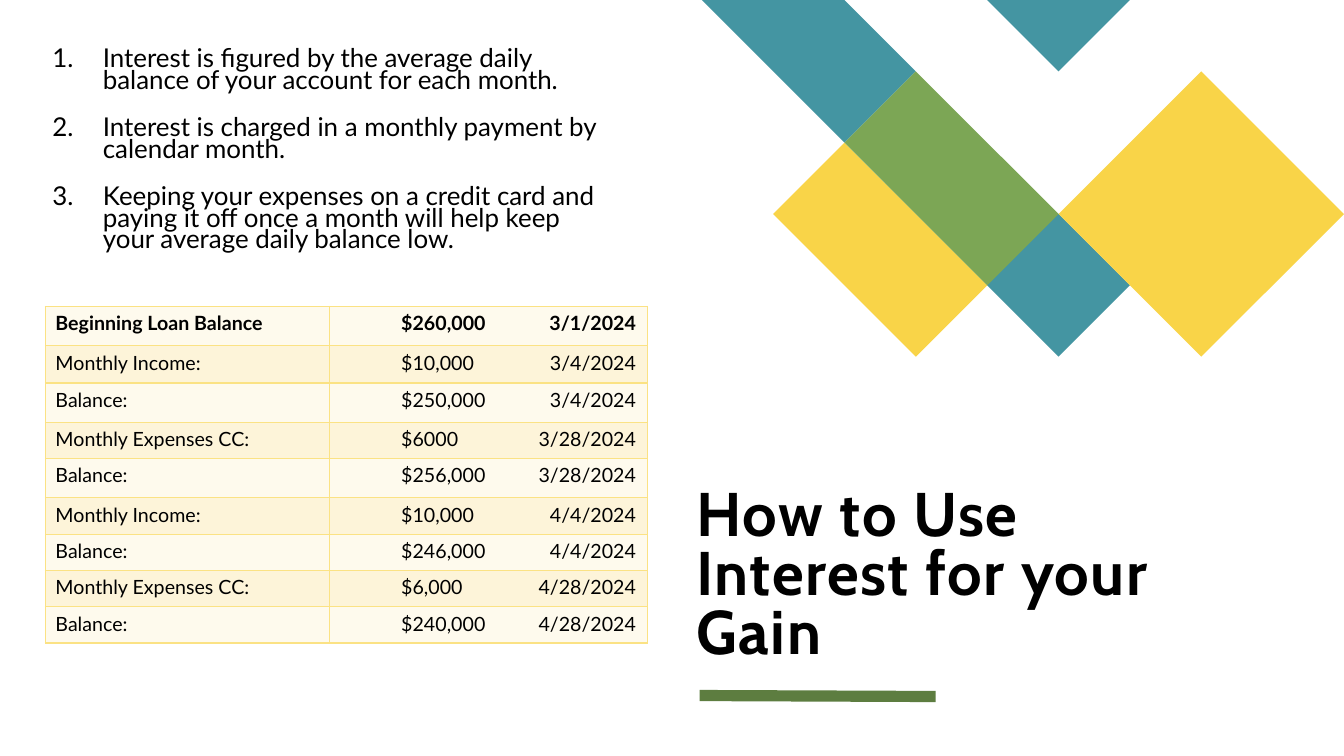
from lxml import etree
from pptx import Presentation
from pptx.dml.color import RGBColor
from pptx.enum import shapes, text
from pptx.oxml import ns
from pptx.util import Inches, Pt

TEAL = RGBColor(0x44, 0x95, 0xA2)
GOLD = RGBColor(0xF9, 0xD4, 0x48)
LEAF = RGBColor(0x7C, 0xA6, 0x55)
MOSS = RGBColor(0x5D, 0x7D, 0x40)
BLACK = RGBColor(0, 0, 0)
CREAM = RGBColor(0xFE, 0xFA, 0xED)
SAND = RGBColor(0xFD, 0xF4, 0xD9)
EDGE = RGBColor(0xFB, 0xE2, 0x84)

TITLE = "How to Use Interest for your Gain"
TIPS = [
    "Interest is figured by the average daily balance of your account for each month.",
    "Interest is charged in a monthly payment by calendar month.",
    "Keeping your expenses on a credit card and paying it off once a month will help keep your average daily balance low.",
]
ROWS = [
    ("Beginning Loan Balance", "$260,000", "3/1/2024", 0.39),
    ("Monthly Income:", "$10,000", "3/4/2024", 0.37),
    ("Balance:", "$250,000", "3/4/2024", 0.39),
    ("Monthly Expenses CC:", "$6000", "3/28/2024", 0.36),
    ("Balance:", "$256,000", "3/28/2024", 0.39),
    ("Monthly Income:", "$10,000", "4/4/2024", 0.36),
    ("Balance:", "$246,000", "4/4/2024", 0.36),
    ("Monthly Expenses CC:", "$6,000", "4/28/2024", 0.36),
    ("Balance:", "$240,000", "4/28/2024", 0.36),
]
COLS = (2.82, 3.15)
TILES = [
    (TEAL, [(2, 0), (0, 0), (2, 2), (3, 1)]),
    (TEAL, [(5, 3), (4, 4), (5, 5), (6, 4)]),
    (GOLD, [(2, 2), (1, 3), (3, 5), (4, 4)]),
    (TEAL, [(6, 0), (4, 0), (5, 1)]),
    (LEAF, [(3, 1), (2, 2), (4, 4), (5, 3)]),
    (GOLD, [(7, 1), (5, 3), (7, 5), (9, 3)]),
]
WIDE, HIGH = 13.33, 7.5
LEFT = 6.96
STEP = (WIDE - LEFT) / 9
PAD, INDENT = 0.1, 0.71


def sub(node, tag, **attrs):
    return etree.SubElement(node, ns.qn(tag), {k: str(v) for k, v in attrs.items()})


def place(shape, *box):
    shape.left, shape.top, shape.width, shape.height = map(Inches, box)


def inset(frame, *sizes):
    (frame.margin_left, frame.margin_top,
     frame.margin_right, frame.margin_bottom) = map(Inches, sizes)
    frame.word_wrap = True
    frame.auto_size = text.MSO_AUTO_SIZE.NONE


def style(para, face, size, bold=False):
    for run in para.runs:
        font = run.font
        font.name, font.size, font.bold = face, Pt(size), bold
        font.color.rgb = BLACK


def add_tile(slide, color, spots):
    pts = [(Inches(LEFT + x * STEP), Inches(y * STEP)) for x, y in spots]
    pen = slide.shapes.build_freeform(*pts[0])
    pen.add_line_segments(pts[1:], close=True)
    tile = pen.convert_to_shape()
    tile.shadow.inherit = False
    tile.fill.solid()
    tile.fill.fore_color.rgb = color
    tile.line.fill.background()


def add_rule(slide):
    rule = slide.shapes.add_connector(
        shapes.MSO_CONNECTOR.STRAIGHT,
        Inches(6.94), Inches(6.9), Inches(9.28), Inches(6.91))
    rule.line.color.rgb = MOSS
    rule.line.width = Pt(8)
    sub(rule._element.spPr, "a:effectLst")


def fill_title(title):
    place(title, 6.91, 3.83, 5.12, 2.78)
    frame = title.text_frame
    frame.text = TITLE
    inset(frame, 0, 0, 0, 0)
    frame.vertical_anchor = text.MSO_ANCHOR.BOTTOM
    para = frame.paragraphs[0]
    para.alignment = text.PP_ALIGN.LEFT
    para.line_spacing = 0.8
    style(para, "Cabin", 44, True)
    para.runs[0].font._element.set("spc", "100")


def fill_tips(body):
    place(body, 0.52, 0.2, 5.68, 2.52)
    frame = body.text_frame
    frame.text = "\n".join(TIPS)
    inset(frame, 0, 0.3, 0.1, 0.05)
    frame.vertical_anchor = text.MSO_ANCHOR.TOP
    for para in frame.paragraphs:
        para.line_spacing = 0.7
        para.space_before = Pt(18)
        style(para, "Lato", 18.5)
        props = para._p.get_or_add_pPr()
        props.set("marL", str(Inches(0.5)))
        props.set("indent", str(Inches(-0.5)))
        sub(props, "a:buFont", typeface="+mj-lt")
        sub(props, "a:buAutoNum", type="arabicPeriod")


def fill_cell(cell, words, color, bold):
    cell.text = words
    para = cell.text_frame.paragraphs[0]
    style(para, "Lato", 14, bold)
    props = cell._tc.get_or_add_tcPr()
    for side in ("a:lnL", "a:lnR", "a:lnT", "a:lnB"):
        line = sub(props, side, w=Pt(1))
        sub(sub(line, "a:solidFill"), "a:srgbClr", val=EDGE)
    cell.fill.solid()
    cell.fill.fore_color.rgb = color
    return para


def add_loan(slide):
    high = sum(row[-1] for row in ROWS)
    grid = slide.shapes.add_table(
        len(ROWS), len(COLS), Inches(0.45), Inches(3.04),
        Inches(sum(COLS)), Inches(high)).table
    for col, width in zip(grid.columns, COLS):
        col.width = Inches(width)
    stop = Inches(COLS[1] - INDENT - PAD - 0.01)
    for i, (label, amount, date, tall) in enumerate(ROWS):
        grid.rows[i].height = Inches(tall)
        color = SAND if i % 2 else CREAM
        fill_cell(grid.cell(i, 0), label, color, i == 0)
        cell = grid.cell(i, 1)
        para = fill_cell(cell, f"{amount}\t{date}", color, i == 0)
        cell.margin_left = Inches(INDENT)
        tabs = sub(para._p.get_or_add_pPr(), "a:tabLst")
        sub(tabs, "a:tab", pos=stop, algn="r")


def main():
    deck = Presentation()
    deck.slide_width, deck.slide_height = Inches(WIDE), Inches(HIGH)
    slide = deck.slides.add_slide(deck.slide_layouts[1])
    for color, spots in TILES:
        add_tile(slide, color, spots)
    add_rule(slide)
    fill_title(slide.shapes.title)
    fill_tips(slide.placeholders[1])
    add_loan(slide)
    deck.save("out.pptx")


if __name__ == "__main__":
    main()
